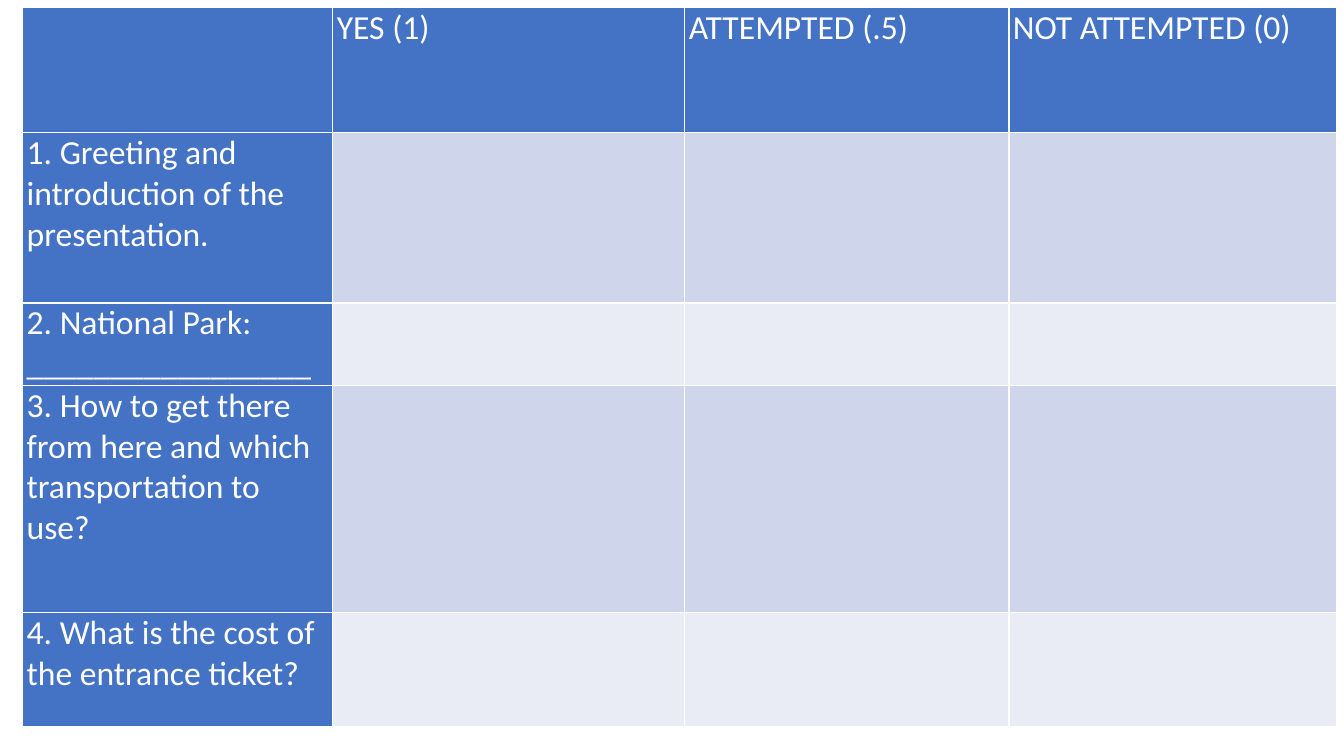
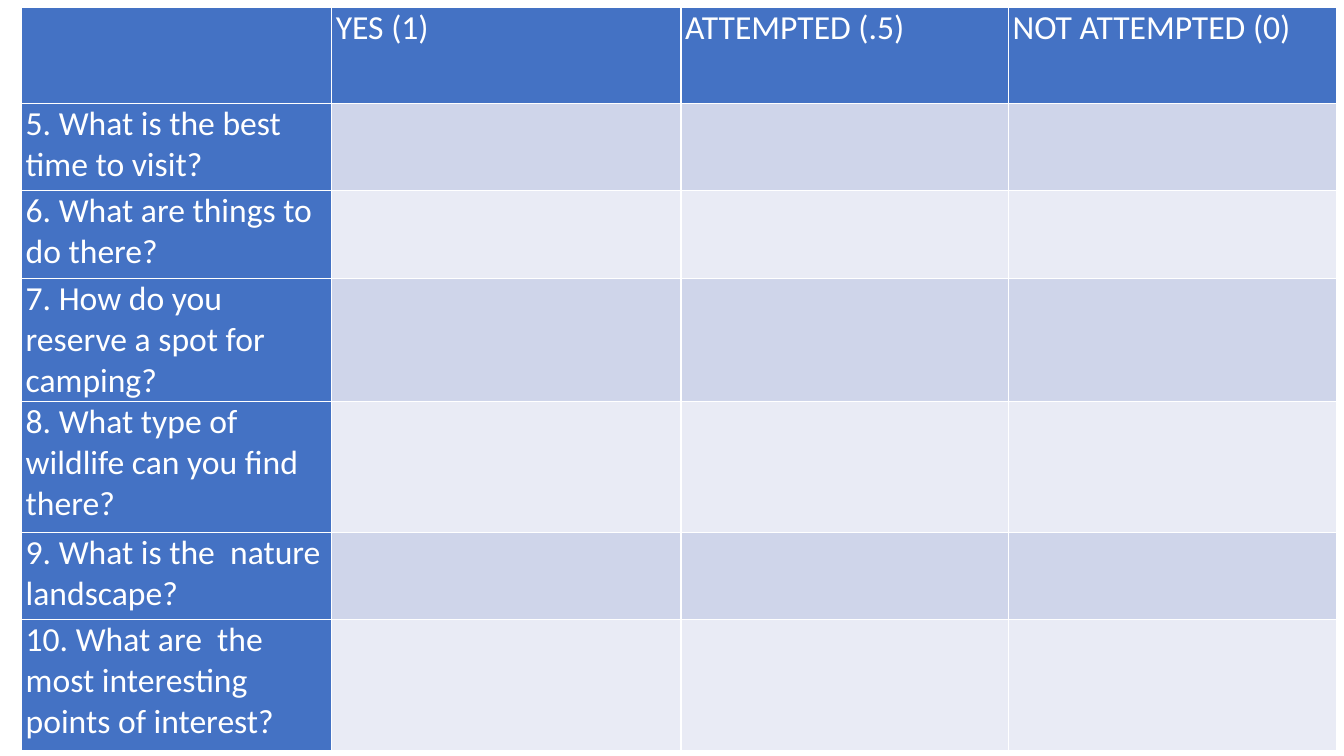
from lxml.etree import SubElement
from pptx import Presentation
from pptx.dml.color import RGBColor as RGB
from pptx.oxml.ns import qn
from pptx.util import Pt

BLUE = RGB(0x44, 0x72, 0xC4)
BAND_DARK = RGB(0xCF, 0xD5, 0xEA)
BAND_LIGHT = RGB(0xE9, 0xEB, 0xF5)
WHITE = RGB(0xFF, 0xFF, 0xFF)
FONT = "Calibri"
TEXT_SIZE = 24
BORDER = 1
INSET = 2.88
HEADINGS = ["", "YES (1)", "ATTEMPTED (.5)", "NOT ATTEMPTED (0)"]

PRESENTATION_ROWS = [
    ("1. Greeting and introduction of the presentation.", 121.9),
    ("2. National Park: _________________", 58.6),
    ("3. How to get there from here and which transportation to use?", 162.5),
    ("4. What is the cost of the entrance ticket?", 81.2),
]
VISIT_ROWS = [
    ("5. What is the best time to visit?", 62.5),
    ("6. What are things to do there?", 62.5),
    ("7. How do you reserve a spot for camping?", 88),
    ("8. What type of wildlife can you find there?", 93.5),
    ("9. What is the  nature landscape?", 62.5),
    ("10. What are  the most interesting points of interest?", 93.5),
]


def add_borders(cell):
    tc_pr = cell._tc.get_or_add_tcPr()
    for side in ("a:lnL", "a:lnR", "a:lnT", "a:lnB"):
        ln = SubElement(tc_pr, qn(side), w=str(Pt(BORDER)))
        fill = SubElement(ln, qn("a:solidFill"))
        SubElement(fill, qn("a:srgbClr"), val=str(WHITE))


def style_cell(cell, text, color):
    cell.margin_left = cell.margin_right = Pt(INSET)
    cell.margin_top = cell.margin_bottom = 0
    add_borders(cell)
    cell.fill.solid()
    cell.fill.fore_color.rgb = color
    if text:
        p = cell.text_frame.paragraphs[0]
        p.text = text
        font = p.runs[0].font
        font.name, font.size, font.bold = FONT, Pt(TEXT_SIZE), False
        font.color.rgb = WHITE


def add_rubric(slide, left, top, widths, header_height, criteria):
    heights = [header_height] + [height for _, height in criteria]
    frame = slide.shapes.add_table(
        len(heights), len(widths), Pt(left), Pt(top),
        Pt(sum(widths)), Pt(sum(heights)))
    table = frame.table
    table.first_col = True
    for column, width in zip(table.columns, widths):
        column.width = Pt(width)
    for row, height in zip(table.rows, heights):
        row.height = Pt(height)

    for c, heading in enumerate(HEADINGS):
        style_cell(table.cell(0, c), heading, BLUE)
    for r, (criterion, _) in enumerate(criteria, 1):
        style_cell(table.cell(r, 0), criterion, BLUE)
        band = BAND_DARK if r % 2 else BAND_LIGHT
        for c in range(1, len(widths)):
            style_cell(table.cell(r, c), "", band)


def main():
    prs = Presentation()
    prs.slide_width, prs.slide_height = Pt(960), Pt(540)
    rubrics = [
        (16.2, 5.4, [221.5, 251.5, 231.5, 234], 89.2, PRESENTATION_ROWS),
        (15.5, 5.4, [221.5, 249.5, 234, 234], 68.4, VISIT_ROWS),
    ]
    for rubric in rubrics:
        slide = prs.slides.add_slide(prs.slide_layouts[6])
        add_rubric(slide, *rubric)
    prs.save("out.pptx")


if __name__ == "__main__":
    main()
